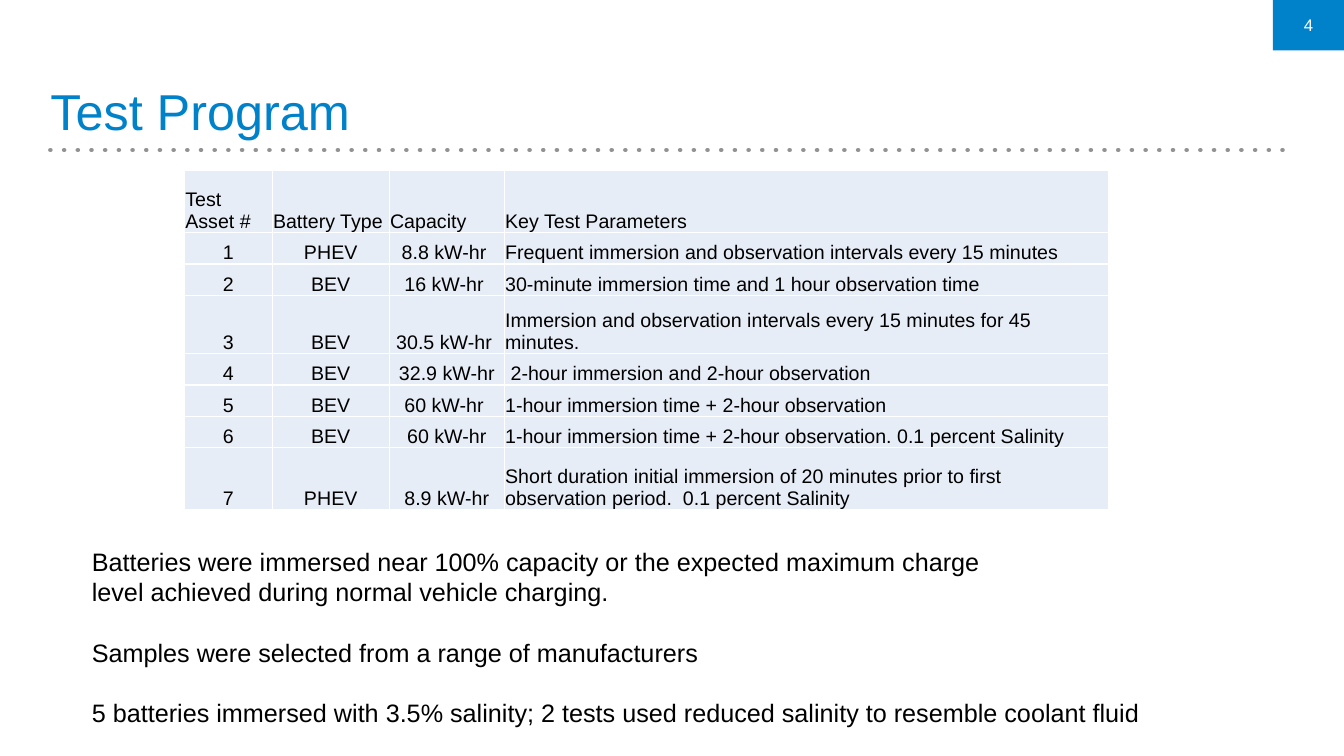
"""Build the Test Program slide: a battery test table with notes below it."""
from dataclasses import dataclass

from lxml.etree import SubElement
from pptx import Presentation
from pptx.dml.color import RGBColor
from pptx.enum.shapes import MSO_CONNECTOR, MSO_SHAPE
from pptx.enum.text import MSO_ANCHOR, MSO_AUTO_SIZE, PP_ALIGN
from pptx.oxml.ns import qn
from pptx.util import Cm, Pt


@dataclass(frozen=True)
class Theme:
    font: str = "Arial"
    blue: str = "0082CB"
    grey: str = "929292"
    black: str = "000000"
    white: str = "FFFFFF"
    cell: str = "E7EDF6"
    title_size: int = 36
    body_size: int = 18
    table_size: int = 14
    number_size: int = 12


theme = Theme()


def write(paragraph, text, size, color=theme.black, align=PP_ALIGN.LEFT, spacing=1.0, before=0):
    paragraph.alignment = align
    paragraph.line_spacing = spacing
    paragraph.space_before = Pt(before)
    run = paragraph.add_run()
    run.text = text
    run.font.name = theme.font
    run.font.size = Pt(size)
    run.font.color.rgb = RGBColor.from_string(color)


def add_element(parent, tag, **attributes):
    return SubElement(parent, qn(tag), attributes)


presentation = Presentation()
presentation.slide_width, presentation.slide_height = Cm(33.87), Cm(19.05)
slide = presentation.slides.add_slide(presentation.slide_layouts[1])
title, body = slide.placeholders

rule = slide.shapes.add_connector(MSO_CONNECTOR.STRAIGHT, Cm(1.27), Cm(3.78), Cm(32.39), Cm(3.78))
rule.line.color.rgb = RGBColor.from_string(theme.grey)
rule.line.width = Pt(3.25)
rule_line = rule.line._get_or_add_ln()
rule_line.set("cap", "rnd")
dashes = add_element(rule_line, "a:custDash")
add_element(dashes, "a:ds", d="100000", sp="200000")
add_element(rule._element.spPr, "a:effectLst")

number_box = slide.shapes.add_shape(MSO_SHAPE.RECTANGLE, Cm(32.08), 0, Cm(1.79), Cm(1.27))
number_box.fill.solid()
number_box.fill.fore_color.rgb = RGBColor.from_string(theme.blue)
number_box.line.fill.background()
number_box.shadow.inherit = False
number_box.text_frame.vertical_anchor = MSO_ANCHOR.MIDDLE
write(number_box.text_frame.paragraphs[0], "4", theme.number_size,
      color=theme.white, align=PP_ALIGN.CENTER)

title.left, title.top, title.width, title.height = Cm(1.27), Cm(1.02), Cm(31.12), Cm(2.54)
title_frame = title.text_frame
title_frame.auto_size = MSO_AUTO_SIZE.NONE
title_frame.vertical_anchor = MSO_ANCHOR.BOTTOM
title_frame.margin_left = title_frame.margin_right = 0
title_frame.margin_top = title_frame.margin_bottom = 0
write(title_frame.paragraphs[0], "Test Program", theme.title_size, color=theme.blue, spacing=0.9)

test_rows = [
    ("Test Asset #", "Battery Type", "Capacity", "Key Test Parameters"),
    ("1", "PHEV", "8.8 kW-hr ", "Frequent immersion and observation intervals every 15 minutes"),
    ("2", "BEV", "16 kW-hr ", "30-minute immersion time and 1 hour observation time"),
    ("3", "BEV", "30.5 kW-hr ",
     "Immersion and observation intervals every 15 minutes for 45 minutes."),
    ("4", "BEV", "32.9 kW-hr", " 2-hour immersion and 2-hour observation"),
    ("5", "BEV", "60 kW-hr ", "1-hour immersion time + 2-hour observation"),
    ("6", "BEV", "60 kW-hr", "1-hour immersion time + 2-hour observation. 0.1 percent Salinity"),
    ("7", "PHEV", "8.9 kW-hr",
     "Short duration initial immersion of 20 minutes prior to first observation period.  "
     "0.1 percent Salinity"),
]
column_widths = [2.21, 2.95, 2.9, 15.24]
single_row = 0.79
tall_rows = {0: 1.57, 3: 1.47, 7: 1.57}
row_heights = [tall_rows.get(index, single_row) for index in range(len(test_rows))]

table = slide.shapes.add_table(len(test_rows), len(column_widths), Cm(4.65), Cm(4.29),
                               Cm(sum(column_widths)), Cm(sum(row_heights))).table
table.first_row = table.horz_banding = False
for column, width in zip(table.columns, column_widths):
    column.width = Cm(width)
for row_index, (row, height, texts) in enumerate(zip(table.rows, row_heights, test_rows)):
    row.height = Cm(height)
    for column_index, (cell, text) in enumerate(zip(row.cells, texts)):
        cell.margin_left = cell.margin_right = cell.margin_top = Cm(0.02)
        cell.margin_bottom = 0
        cell.vertical_anchor = MSO_ANCHOR.BOTTOM
        for side in ("a:lnL", "a:lnR", "a:lnT", "a:lnB"):
            border = add_element(cell._tc.tcPr, side, w=str(Pt(1)))
            add_element(add_element(border, "a:solidFill"), "a:srgbClr", val=theme.white)
        cell.fill.solid()
        cell.fill.fore_color.rgb = RGBColor.from_string(theme.cell)
        centered = row_index > 0 and column_index < 3
        write(cell.text_frame.paragraphs[0], text, theme.table_size,
              align=PP_ALIGN.CENTER if centered else PP_ALIGN.LEFT)

line_pitch = 21.6
notes = [
    ("Batteries were immersed near 100% capacity or the expected maximum charge", 0),
    ("level achieved during normal vehicle charging.", 0),
    ("Samples were selected from a range of manufacturers", line_pitch),
    ("5 batteries immersed with 3.5% salinity; 2 tests used reduced salinity to resemble "
     "coolant fluid", line_pitch),
]
body.left, body.top, body.width, body.height = Cm(2.06), Cm(13.64), Cm(26.97), Cm(4.88)
body_frame = body.text_frame
body_frame.auto_size = MSO_AUTO_SIZE.NONE
body_frame.word_wrap = False
for index, (text, before) in enumerate(notes):
    paragraph = body_frame.add_paragraph() if index else body_frame.paragraphs[0]
    write(paragraph, text, theme.body_size, spacing=Pt(line_pitch), before=before)
    properties = paragraph._p.get_or_add_pPr()
    properties.set("marL", "0")
    properties.set("indent", "0")
    add_element(properties, "a:buNone")

presentation.save("out.pptx")
